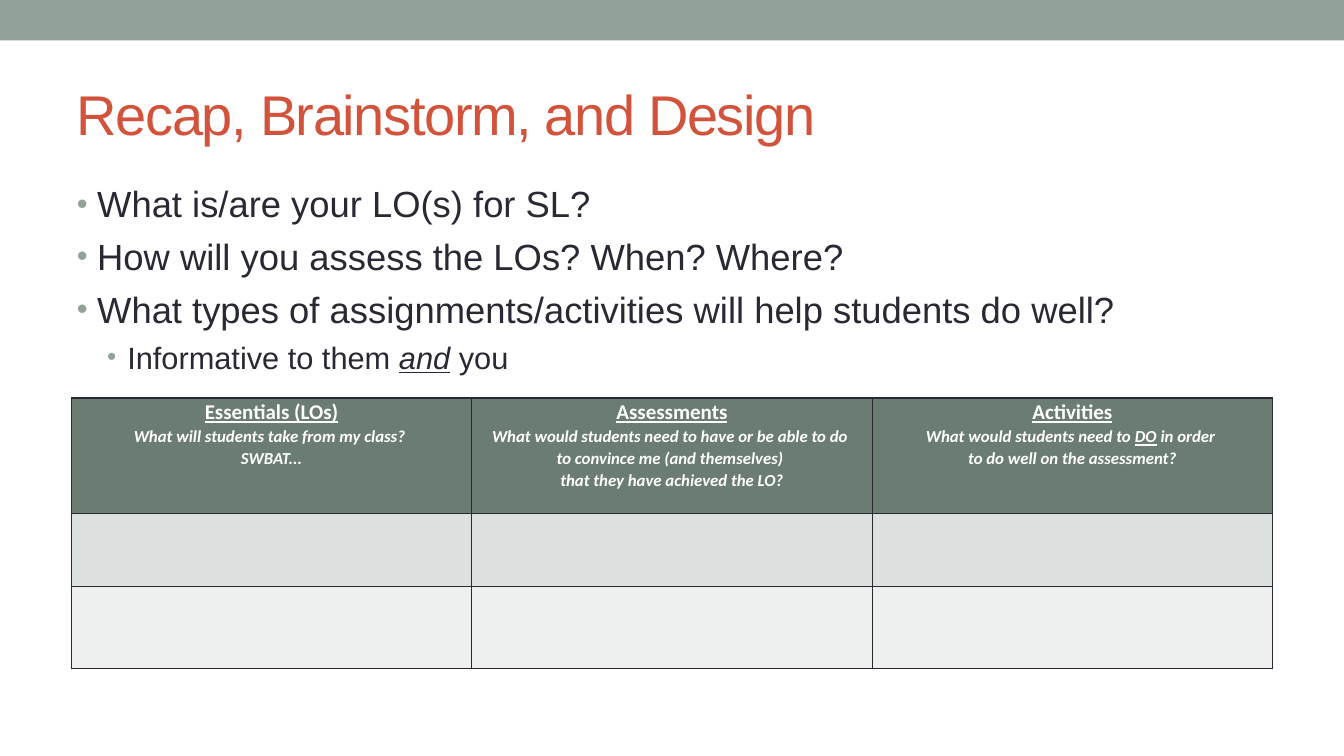
from lxml.etree import SubElement
from pptx import Presentation
from pptx.dml.color import RGBColor
from pptx.enum.shapes import MSO_SHAPE
from pptx.enum.text import MSO_ANCHOR, PP_ALIGN
from pptx.oxml.ns import qn
from pptx.util import Cm, Pt

SAGE = RGBColor(0x93, 0xA2, 0x99)
RUST = RGBColor(0xD2, 0x53, 0x3C)
INK = RGBColor(0x29, 0x29, 0x34)
WHITE = RGBColor(0xFF, 0xFF, 0xFF)
HEADER_FILL = RGBColor(0x6B, 0x7D, 0x72)
ROW_FILLS = [HEADER_FILL, RGBColor(0xDC, 0xE0, 0xDE), RGBColor(0xEE, 0xF0, 0xEF)]

TITLE = "Recap, Brainstorm, and Design"

# Each line is a list of (text, emphasised) runs.
BULLETS = [  # (level, runs)
    (0, [("What is/are your LO(s) for SL?", False)]),
    (0, [("How will you assess the LOs? When? Where?", False)]),
    (0, [("What types of assignments/activities will help students do well?", False)]),
    (1, [("Informative to them ", False), ("and", True), (" you", False)]),
]
LEVELS = [(26, Cm(0.51)), (22, Cm(1.27))]  # size, text indent
HANGING = Cm(0.51)

COLUMNS = [  # (heading, prompt lines)
    ("Essentials (LOs)", [
        [("What will students take from my class? ", False)],
        [("SWBAT...", False)],
    ]),
    ("Assessments", [
        [("What would students need to have or be able to do ", False)],
        [("to convince me (and themselves) ", False)],
        [("that they have achieved the LO?", False)],
    ]),
    ("Activities", [
        [("What would students need to ", False), ("DO", True), (" in order ", False)],
        [("to do well on the assessment?", False)],
    ]),
]
COLUMN_WIDTH = Cm(10.09)
ROW_HEIGHTS = [Cm(2.91), Cm(1.83), Cm(2.08)]


def add_run(p, text, font, size, color, bold=False, italic=False, underline=False):
    r = p.add_run()
    r.text = text
    f = r.font
    f.name, f.size, f.color.rgb = font, Pt(size), color
    f.bold, f.italic, f.underline = bold, italic, underline
    return r


def next_paragraph(tf, index):
    return tf.paragraphs[0] if index == 0 else tf.add_paragraph()


def add_text_frame(s, top, height, anchor):
    tf = s.shapes.add_textbox(Cm(1.69), top, Cm(30.48), height).text_frame
    tf.word_wrap = True
    tf.vertical_anchor = anchor
    return tf


def set_bullet(p, indent):
    pPr = p._p.get_or_add_pPr()
    pPr.set("marL", str(indent))
    pPr.set("indent", str(-HANGING))
    color = SubElement(pPr, qn("a:buClr"))
    SubElement(color, qn("a:srgbClr"), val=str(SAGE))
    SubElement(pPr, qn("a:buSzPct"), val="85000")
    SubElement(pPr, qn("a:buFont"), typeface="Arial")
    SubElement(pPr, qn("a:buChar"), char="•")


def set_borders(cell):
    tcPr = cell._tc.get_or_add_tcPr()
    for index, side in enumerate(("lnL", "lnR", "lnT", "lnB")):
        ln = tcPr.makeelement(qn(f"a:{side}"), {"w": str(Pt(1))})
        fill = SubElement(ln, qn("a:solidFill"))
        SubElement(fill, qn("a:srgbClr"), val=str(INK))
        tcPr.insert(index, ln)


def fill_header(cell, heading, prompt):
    tf = cell.text_frame
    lines = [[(heading, True)]] + prompt
    for index, runs in enumerate(lines):
        p = next_paragraph(tf, index)
        p.alignment = PP_ALIGN.CENTER
        p.line_spacing = 1.07
        for text, underline in runs:
            add_run(p, text, "Calibri", 12 if index else 15, WHITE,
                    bold=True, italic=index > 0, underline=underline)


def main():
    prs = Presentation()
    prs.slide_width, prs.slide_height = Cm(33.87), Cm(19.05)
    s = prs.slides.add_slide(prs.slide_layouts[6])

    band = s.shapes.add_shape(MSO_SHAPE.RECTANGLE, 0, 0, prs.slide_width, Cm(1.02))
    band.shadow.inherit = False
    band.fill.solid()
    band.fill.fore_color.rgb = SAGE
    band.line.fill.background()

    tf = add_text_frame(s, Cm(1.48), Cm(2.74), MSO_ANCHOR.MIDDLE)
    r = add_run(tf.paragraphs[0], TITLE, "Arial", 40, RUST)
    r.font._element.set("spc", "-100")

    tf = add_text_frame(s, Cm(4.45), Cm(5.79), MSO_ANCHOR.TOP)
    for index, (level, runs) in enumerate(BULLETS):
        size, indent = LEVELS[level]
        p = next_paragraph(tf, index)
        p.level = level
        p.space_before = Pt(size / 4)
        set_bullet(p, indent)
        for text, stressed in runs:
            add_run(p, text, "Arial", size, INK, italic=stressed, underline=stressed)

    table = s.shapes.add_table(
        len(ROW_HEIGHTS), len(COLUMNS), Cm(1.8), Cm(10.03),
        COLUMN_WIDTH * len(COLUMNS), sum(ROW_HEIGHTS)).table
    for column in table.columns:
        column.width = COLUMN_WIDTH
    for row, height, color in zip(table.rows, ROW_HEIGHTS, ROW_FILLS):
        row.height = height
        for cell in row.cells:
            cell.margin_left = cell.margin_right = Cm(0.18)
            cell.margin_top = cell.margin_bottom = 0
            cell.fill.solid()
            cell.fill.fore_color.rgb = color
            set_borders(cell)
    for cell, (heading, prompt) in zip(table.rows[0].cells, COLUMNS):
        fill_header(cell, heading, prompt)

    prs.save("out.pptx")


if __name__ == "__main__":
    main()
